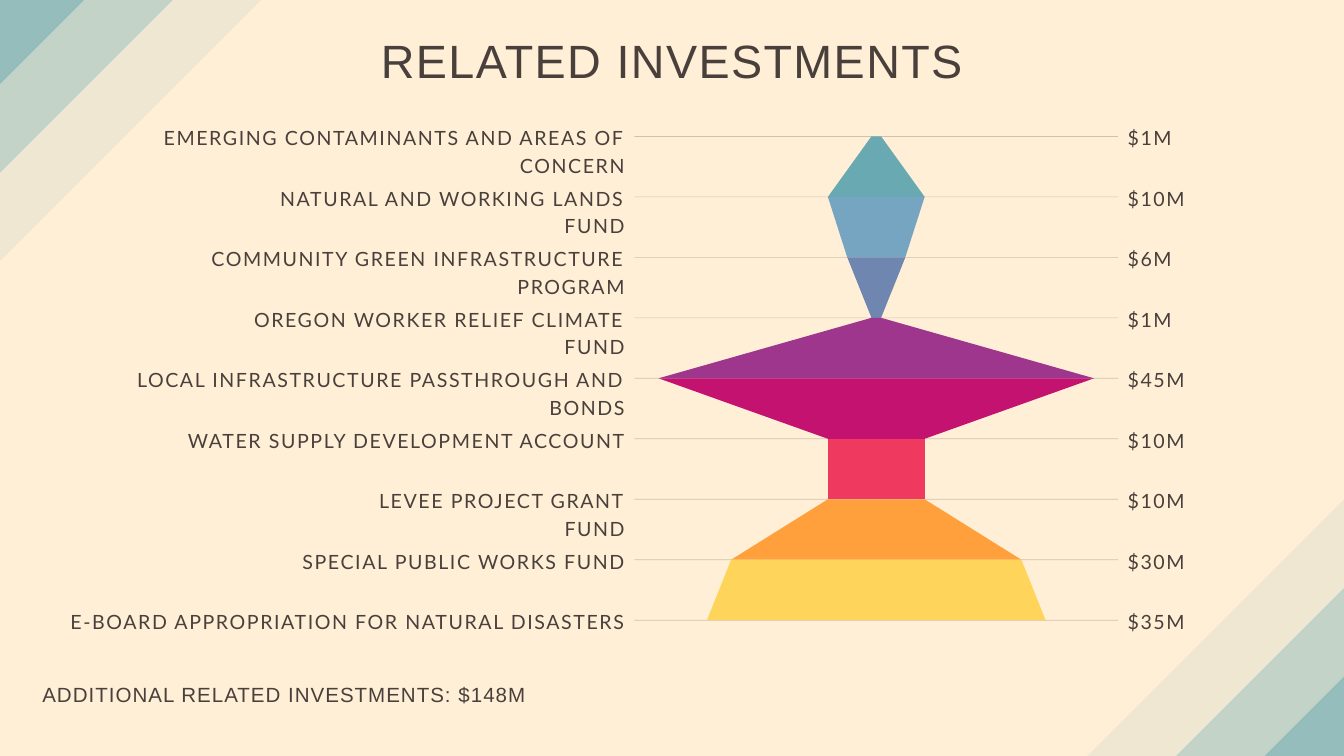
from dataclasses import dataclass

from lxml import etree
from pptx import Presentation
from pptx.dml.color import RGBColor
from pptx.enum.shapes import MSO_CONNECTOR, MSO_SHAPE
from pptx.enum.text import MSO_ANCHOR, MSO_AUTO_SIZE, PP_ALIGN
from pptx.oxml.ns import qn
from pptx.util import Inches, Pt

LEFT, CENTER, RIGHT = PP_ALIGN.LEFT, PP_ALIGN.CENTER, PP_ALIGN.RIGHT
TOP = MSO_ANCHOR.TOP
GROW = MSO_AUTO_SIZE.SHAPE_TO_FIT_TEXT
RECT = MSO_SHAPE.RECTANGLE
STRAIGHT = MSO_CONNECTOR.STRAIGHT


@dataclass(frozen=True)
class Theme:
    paper: str = "FFEFD6"
    ink: str = "49403C"
    stripe: str = "69A9B2"
    bands: tuple = ("69A9B2", "76A5C1", "6F87B0", "9E368E",
                    "C41271", "F0395F", "FFA03C", "FFD45A")
    # font, size, line pitch, letter spacing (all in points)
    title: tuple = ("Arial", 50, 60, 1.5)
    total: tuple = ("Arial", 22, 30.8, 1.1)
    label: tuple = ("Lato", 21, 29.4, 1.7)


theme = Theme()

WIDE, HIGH = 20, 11.25
ROW, FIRST = 0.9, 2.03      # row pitch and top edge of the funnel
MID, UNIT = 13.04, 0.144    # funnel axis and inches per $1M
NAME_END, RULE_X, RULE_END, COST_X = 9.295, 9.44, 16.64, 16.78

# name, width of its box, cost in $M
FUNDS = [
    ("EMERGING CONTAMINANTS AND AREAS OF CONCERN", 8.41, 1),
    ("NATURAL AND WORKING LANDS FUND", 6.06, 10),
    ("COMMUNITY GREEN INFRASTRUCTURE PROGRAM", 7.81, 6),
    ("OREGON WORKER RELIEF CLIMATE FUND", 6.5, 1),
    ("LOCAL INFRASTRUCTURE PASSTHROUGH AND BONDS", 8.45, 45),
    ("WATER SUPPLY DEVELOPMENT ACCOUNT", 6.55, 10),
    ("LEVEE PROJECT GRANT FUND", 4.64, 10),
    ("SPECIAL PUBLIC WORKS FUND", 4.82, 30),
    ("E-BOARD APPROPRIATION FOR NATURAL DISASTERS", 8.42, 35),
]


def write(box, text, style, align):
    """Fill a text box or placeholder with one styled run."""
    face, size, pitch, gap = style
    frame = box.text_frame
    frame.margin_left = frame.margin_right = 0
    frame.margin_top = frame.margin_bottom = 0
    frame.word_wrap = True
    frame.auto_size = GROW
    frame.vertical_anchor = TOP
    para = frame.paragraphs[0]
    para.alignment = align
    para.line_spacing = Pt(pitch)
    run = para.add_run()
    run.text = text
    run.font.name = face
    run.font.size = Pt(size)
    run.font.color.rgb = RGBColor.from_string(theme.ink)
    run.font._element.set("spc", str(round(gap * 100)))


def fade(shape, share):
    """Make the shape's only colour opaque by the given percentage."""
    color = next(shape._element.iter(qn("a:srgbClr")))
    etree.SubElement(color, qn("a:alpha")).set("val", str(share * 1000))


deck = Presentation()
deck.slide_width, deck.slide_height = Inches(WIDE), Inches(HIGH)
slide = deck.slides.add_slide(deck.slide_layouts[5])
shapes = slide.shapes
back = slide.background.fill
back.solid()
back.fore_color.rgb = RGBColor.from_string(theme.paper)

# Title
title = shapes.title
title.left, title.top = 0, Inches(0.47)
title.width, title.height = Inches(WIDE), Inches(0.84)
write(title, "RELATED INVESTMENTS", theme.title, CENTER)

# Corner stripes, fading towards the middle of the slide
for x, y, step, angle in [(0.36, -6.21, 0.66, 45), (19.26, 5.04, -0.66, 225)]:
    for i, share in enumerate((70, 40, 10)):
        stripe = shapes.add_shape(RECT, Inches(x + i * step), Inches(y + i * step),
                                  Inches(0.94), Inches(11.93))
        stripe.rotation = angle
        stripe.shadow.inherit = False
        stripe.line.fill.background()
        stripe.fill.solid()
        stripe.fill.fore_color.rgb = RGBColor.from_string(theme.stripe)
        fade(stripe, share)

# Total
total = shapes.add_textbox(Inches(0.63), Inches(10.09), Inches(7.49), Inches(0.42))
write(total, "ADDITIONAL RELATED INVESTMENTS: $148M", theme.total, LEFT)

# Fund names, costs and rules
for i, (name, width, cost) in enumerate(FUNDS):
    y = FIRST + i * ROW
    for x, wide, text, align in [(NAME_END - width, width, name, RIGHT),
                                 (COST_X, 1.22, f"${cost}M", LEFT)]:
        box = shapes.add_textbox(Inches(x), Inches(y - 0.21), Inches(wide), Inches(0.38))
        write(box, text, theme.label, align)
    rule = shapes.add_connector(STRAIGHT, Inches(RULE_X), Inches(y),
                                Inches(RULE_END), Inches(y))
    rule.line.width = Pt(0.75)
    rule.line.color.rgb = RGBColor.from_string(theme.ink)
    fade(rule, 25)
    etree.SubElement(rule._element.spPr, qn("a:effectLst"))

# Funnel bands, each running from one cost to the next
for i, color in enumerate(theme.bands):
    upper, lower = (FUNDS[k][2] * UNIT / 2 for k in (i, i + 1))
    y = FIRST + i * ROW
    points = [(MID - upper, y), (MID + upper, y),
              (MID + lower, y + ROW), (MID - lower, y + ROW)]
    points = [(Inches(px), Inches(py)) for px, py in points]
    pen = shapes.build_freeform(*points[0])
    pen.add_line_segments(points[1:], close=True)
    band = pen.convert_to_shape()
    band.shadow.inherit = False
    band.line.fill.background()
    band.fill.solid()
    band.fill.fore_color.rgb = RGBColor.from_string(color)

deck.save("out.pptx")
